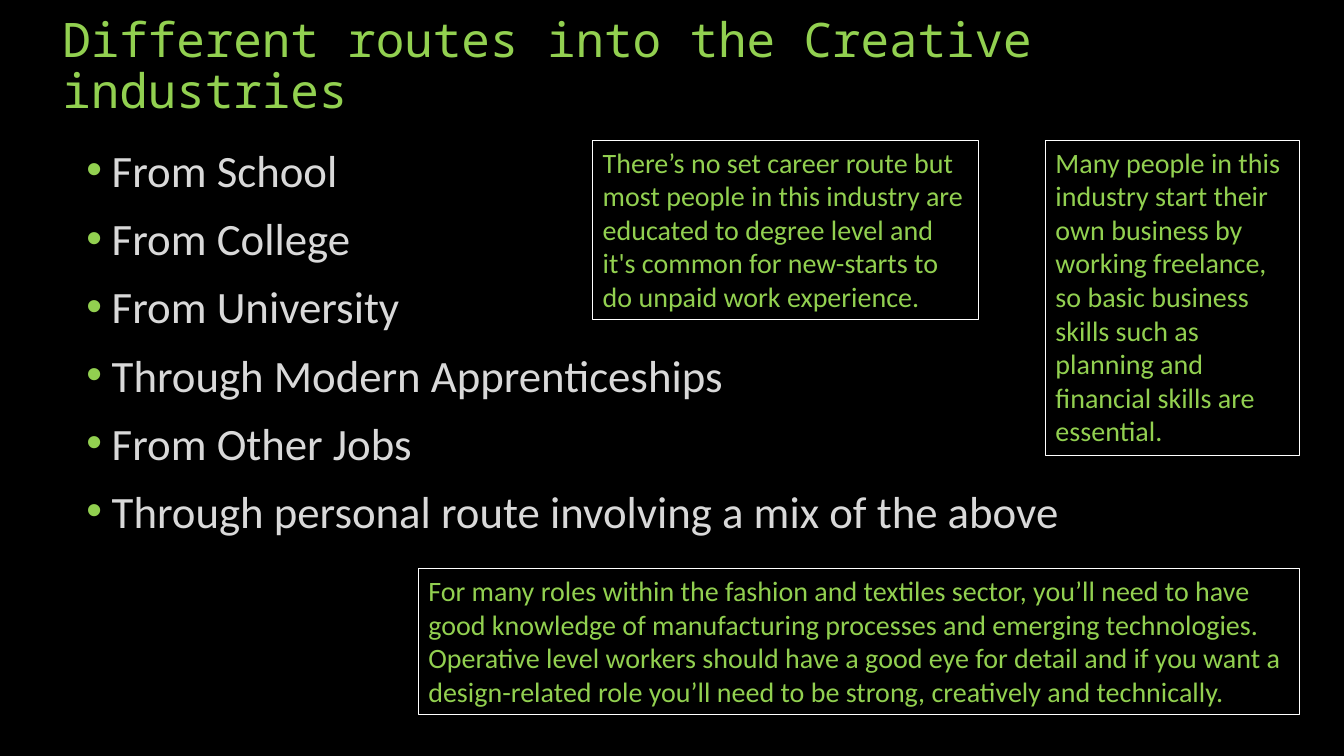
from lxml import etree
from pptx import Presentation
from pptx.dml.color import RGBColor
from pptx.enum import shapes, text
from pptx.oxml import ns
from pptx.util import Inches, Pt

GREEN, GREY, WHITE, BLACK = "92D050", "D9D9D9", "FFFFFF", "000000"

ROUTES = [
    "From School",
    "From College",
    "From University",
    "Through Modern Apprenticeships",
    "From Other Jobs",
    "Through personal route involving a mix of the above",
]

# Each note: left, top, width, height, wording
NOTES = [
    (5.88, 1.39, 3.83, 1.78,
     "There’s no set career route but most people in this industry are "
     "educated to degree level and it's common for new-starts to do unpaid "
     "work experience."),
    (10.37, 1.39, 2.52, 3.13,
     "Many people in this industry start their own business by working "
     "freelance, so basic business skills such as planning and financial "
     "skills are essential."),
    (4.15, 5.64, 8.74, 1.45,
     "For many roles within the fashion and textiles sector, you’ll need to "
     "have good knowledge of manufacturing processes and emerging "
     "technologies. Operative level workers should have a good eye for detail "
     "and if you want a design-related role you’ll need to be strong, "
     "creatively and technically."),
]


def color(code):
    return RGBColor.from_string(code)


def style(par, size, code, font="Calibri"):
    par.alignment = text.PP_ALIGN.LEFT
    for run in par.runs:
        run.font.size = Pt(size)
        run.font.name = font
        run.font.color.rgb = color(code)


def bullet(par, code):
    props = par._p.get_or_add_pPr()
    props.set("marL", str(Inches(0.25)))
    props.set("indent", str(Inches(-0.25)))
    tint = etree.SubElement(props, ns.qn("a:buClr"))
    etree.SubElement(tint, ns.qn("a:srgbClr"), val=code)
    etree.SubElement(props, ns.qn("a:buFont"), typeface="Arial")
    etree.SubElement(props, ns.qn("a:buChar"), char="•")


def add_frame(slide, left, top, width, height):
    box = slide.shapes.add_textbox(
        Inches(left), Inches(top), Inches(width), Inches(height))
    box.text_frame.word_wrap = True
    return box.text_frame


def add_title(slide, left, top, width, height):
    frame = add_frame(slide, left, top, width, height)
    frame.vertical_anchor = text.MSO_ANCHOR.BOTTOM
    frame.text = "Different routes into the Creative industries"
    par = frame.paragraphs[0]
    par.line_spacing = 0.9
    style(par, 34, GREEN, "Noto Sans Mono")


def add_routes(slide, left, top, width, height):
    frame = add_frame(slide, left, top, width, height)
    frame.text = "\n".join(ROUTES)
    for par in frame.paragraphs:
        par.line_spacing = 0.8
        par.space_before = Pt(18)
        bullet(par, GREEN)
        style(par, 32, GREY)


def add_note(slide, left, top, width, height, words):
    note = slide.shapes.add_shape(
        shapes.MSO_SHAPE.RECTANGLE,
        Inches(left), Inches(top), Inches(width), Inches(height))
    note.shadow.inherit = False
    note.fill.background()
    note.line.color.rgb = color(WHITE)
    note.line.width = Pt(0.75)
    frame = note.text_frame
    frame.word_wrap = True
    frame.auto_size = text.MSO_AUTO_SIZE.SHAPE_TO_FIT_TEXT
    frame.vertical_anchor = text.MSO_ANCHOR.TOP
    frame.text = words
    style(frame.paragraphs[0], 20, GREEN)


def main():
    deck = Presentation()
    deck.slide_width, deck.slide_height = Inches(13.33), Inches(7.5)
    slide = deck.slides.add_slide(deck.slide_layouts[6])
    slide.background.fill.solid()
    slide.background.fill.fore_color.rgb = color(BLACK)

    # Heading and list of routes
    add_title(slide, 0.52, 0.21, 12.05, 1.02)
    add_routes(slide, 0.76, 1.47, 10, 4.67)

    # Outlined notes
    for note in NOTES:
        add_note(slide, *note)

    deck.save("out.pptx")


if __name__ == "__main__":
    main()
